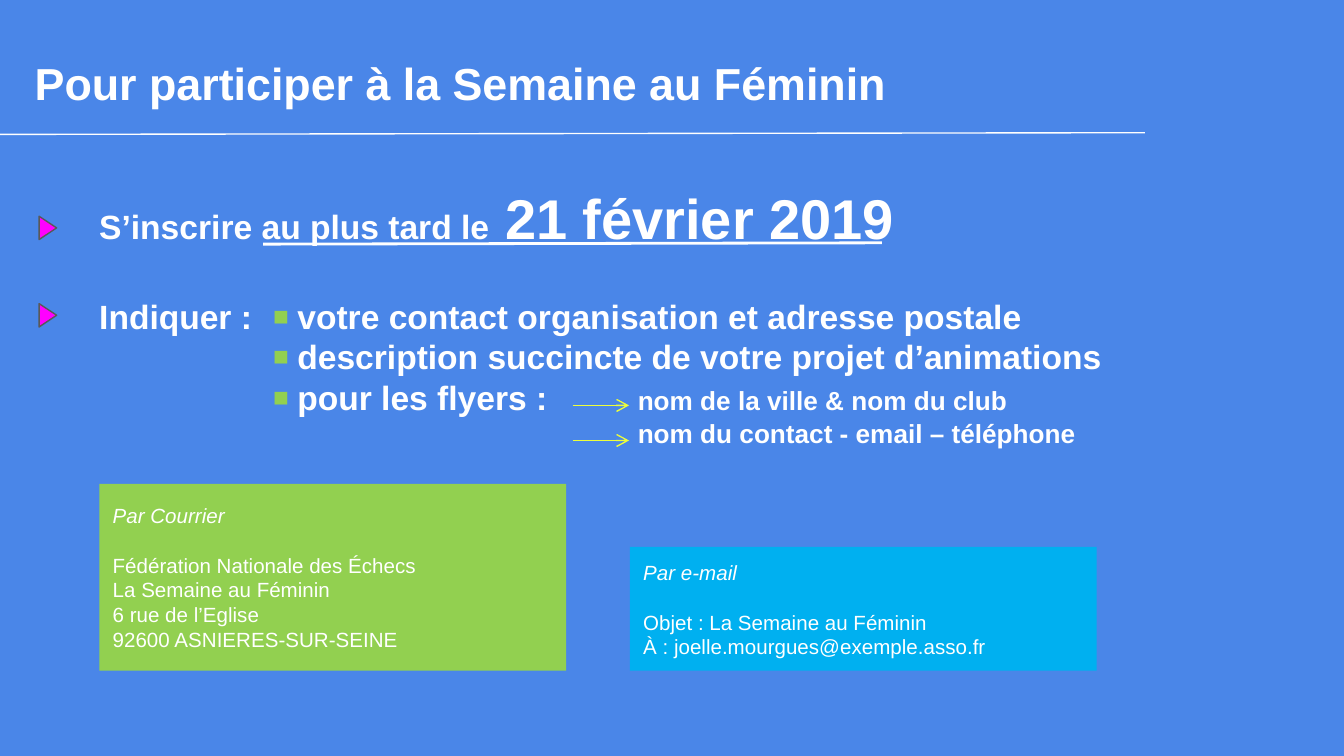
from lxml import etree
from pptx import Presentation
from pptx import util as u
from pptx.dml.color import RGBColor
from pptx.enum import shapes, text
from pptx.oxml.ns import qn

# Content
TITLE = "Pour participer à la Semaine au Féminin"
DEADLINE = [("S’inscrire au plus tard le", "body"), (" 21 février 2019", "date")]
INDICATE = "Indiquer :"
ITEMS = [
    "votre contact organisation et adresse postale",
    "description succincte de votre projet d’animations",
    "pour les flyers :",
]
FLYER_DETAILS = ["nom de la ville & nom du club", "nom du contact - email – téléphone"]
CARDS = [
    {
        "heading": "Par Courrier",
        "lines": [
            "Fédération Nationale des Échecs",
            "La Semaine au Féminin",
            "6 rue de l’Eglise",
            "92600 ASNIERES-SUR-SEINE",
        ],
        "color": "mail", "left": 53.3, "height": 100, "anchor": text.MSO_ANCHOR.MIDDLE,
    },
    {
        "heading": "Par e-mail",
        "lines": ["Objet : La Semaine au Féminin", "À : joelle.mourgues@exemple.asso.fr"],
        "color": "email", "left": 337.5, "height": 66.3, "anchor": text.MSO_ANCHOR.TOP,
    },
]

# Each type style is (size, line height)
THEME = {
    "font": "Arial",
    "colors": {
        "background": "4A86E8", "text": "FFFFFF", "marker": "FF00FF",
        "outline": "595959", "mail": "92D050", "email": "00B0F0", "arrow": "EDFE3B",
    },
    "type": {
        "title": (24, 29), "body": (18, 21.7), "date": (30, 36.5),
        "detail": (14, 17.7), "card": (11, 13.2),
    },
}

# Layout, in points
INSET = 7.2
TEXT_LEFT = 46.1
LIST_TOP = 151.2
LIST_LEFT = 139.2
CARD_WIDTH, CARD_BOTTOM = 250, 359.3
MARKER_TOPS = (117.4, 164.2)
ARROW_LEFT, ARROW_RIGHT = 306.8, 337
ARROW_LEVELS = (217.2, 236)

presentation = Presentation()
presentation.slide_width, presentation.slide_height = u.Pt(720), u.Pt(405)
slide = presentation.slides.add_slide(presentation.slide_layouts[6])


def color(name):
    return RGBColor.from_string(THEME["colors"][name])


def write(paragraph, content, style="body", bold=True, italic=False, leading=None, after=0):
    """Add one run, or a list of (text, style) runs, to a paragraph."""
    runs = [(content, style)] if isinstance(content, str) else content
    paragraph.alignment = text.PP_ALIGN.LEFT
    paragraph.line_spacing = u.Pt(THEME["type"][leading or style][1])
    paragraph.space_after = u.Pt(after)
    for words, run_style in runs:
        run = paragraph.add_run()
        run.text = words
        run.font.name = THEME["font"]
        run.font.size = u.Pt(THEME["type"][run_style][0])
        run.font.bold, run.font.italic = bold, italic
        run.font.color.rgb = color("text")


def prepare(frame, anchor=text.MSO_ANCHOR.TOP):
    frame.word_wrap = True
    frame.vertical_anchor = anchor
    frame.margin_left = frame.margin_right = u.Pt(INSET)
    frame.margin_top = frame.margin_bottom = u.Pt(INSET)
    return frame


def next_paragraph(frame, index):
    return frame.add_paragraph() if index else frame.paragraphs[0]


def add_text(left, top, width, height, lines, **style):
    box = slide.shapes.add_textbox(u.Pt(left), u.Pt(top), u.Pt(width), u.Pt(height))
    frame = prepare(box.text_frame)
    for index, line in enumerate(lines):
        write(next_paragraph(frame, index), line, **style)
    return frame


def add_bullet(paragraph):
    properties = paragraph._p.get_or_add_pPr()
    properties.set("marL", str(u.Pt(13)))
    properties.set("indent", str(-u.Pt(13)))
    bullet_color = etree.SubElement(properties, qn("a:buClr"))
    etree.SubElement(bullet_color, qn("a:srgbClr"), val=THEME["colors"]["mail"])
    etree.SubElement(properties, qn("a:buSzPct"), val="78000")
    etree.SubElement(properties, qn("a:buFont"), typeface=THEME["font"])
    etree.SubElement(properties, qn("a:buChar"), char="■")


def add_shape(kind, left, top, width, height, fill, outline=None):
    shape = slide.shapes.add_shape(kind, u.Pt(left), u.Pt(top), u.Pt(width), u.Pt(height))
    shape.shadow.inherit = False
    shape.fill.solid()
    shape.fill.fore_color.rgb = color(fill)
    if outline:
        shape.line.color.rgb = color(outline)
        shape.line.width = u.Pt(0.75)
    else:
        shape.line.fill.background()
    return shape


def add_line(start, end, line_color="text", width=0.75, arrow=False):
    points = [u.Pt(value) for value in (*start, *end)]
    line = slide.shapes.add_connector(shapes.MSO_CONNECTOR.STRAIGHT, *points)
    line.line.color.rgb = color(line_color)
    line.line.width = u.Pt(width)
    if arrow:
        etree.SubElement(line.line._get_or_add_ln(), qn("a:tailEnd"), type="arrow")
    etree.SubElement(line._element.spPr, qn("a:effectLst"))


# Title and rule
slide.background.fill.solid()
slide.background.fill.fore_color.rgb = color("background")
add_text(11.5, 22.3, 678, 44, [TITLE], style="title")
add_line((0, 72), (613.4, 71.1))

# Triangle markers
for top in MARKER_TOPS:
    marker = add_shape(shapes.MSO_SHAPE.ISOSCELES_TRIANGLE, 19.4, top, 12.5, 9.4,
                       "marker", "outline")
    marker.rotation = 90

# Deadline
add_text(TEXT_LEFT, 90.7, 543, 44, [DEADLINE], leading="date")
add_line((141, 130.8), (472.4, 130.1), width=1.5)

# What to indicate
add_text(TEXT_LEFT, LIST_TOP, 100, 36, [INDICATE])
item_frame = add_text(LIST_LEFT, LIST_TOP, 480, 80, ITEMS)
for paragraph in item_frame.paragraphs:
    add_bullet(paragraph)
add_text(334.6, 197.7, 280, 50, FLYER_DETAILS, style="detail")

# Contact cards, aligned on their lower edge
for card in CARDS:
    shape = add_shape(shapes.MSO_SHAPE.RECTANGLE, card["left"], CARD_BOTTOM - card["height"],
                      CARD_WIDTH, card["height"], card["color"])
    frame = prepare(shape.text_frame, card["anchor"])
    write(frame.paragraphs[0], card["heading"], style="card", bold=False, italic=True,
          after=THEME["type"]["card"][1])
    for line in card["lines"]:
        write(frame.add_paragraph(), line, style="card", bold=False)

# Arrows to the flyer details
for level in ARROW_LEVELS:
    add_line((ARROW_LEFT, level), (ARROW_RIGHT, level), "arrow", arrow=True)

presentation.save("out.pptx")
